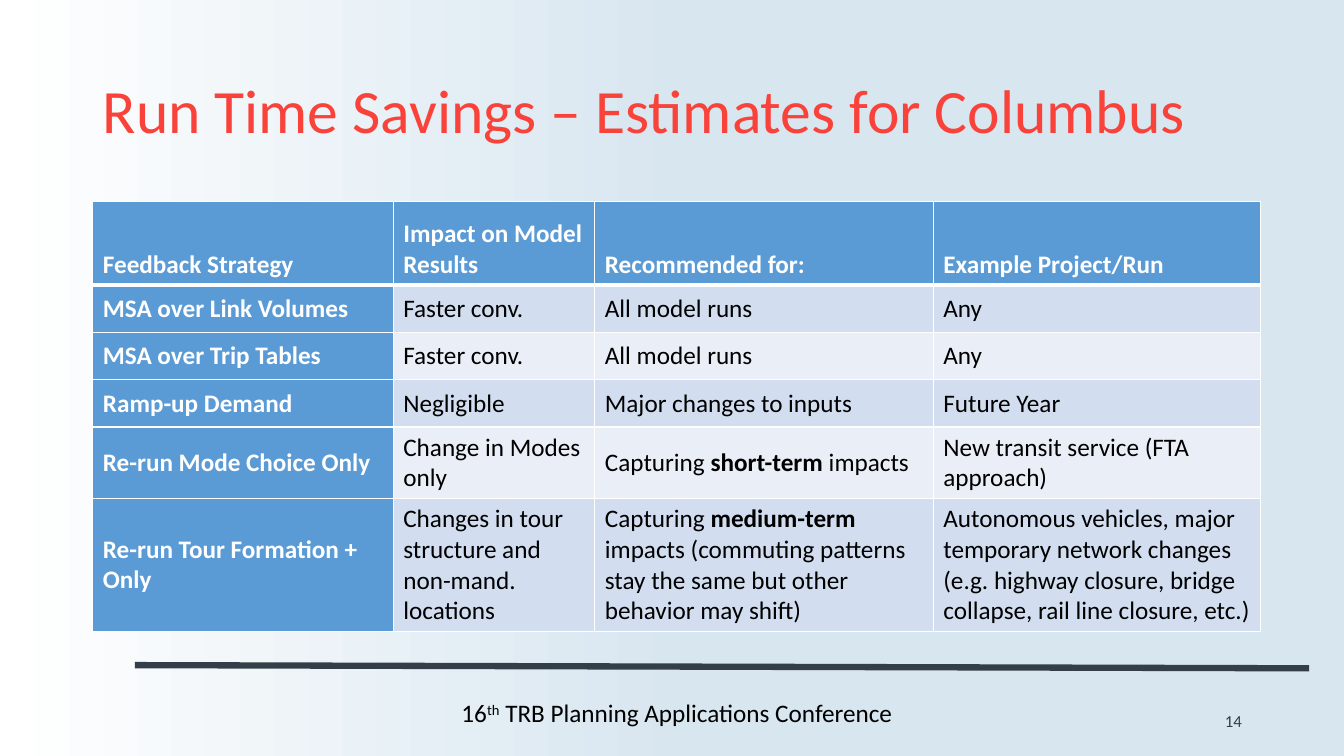
from typing import NamedTuple

from lxml import etree
from pptx import Presentation
from pptx.dml.color import RGBColor
from pptx.enum import shapes, text
from pptx.oxml import ns
from pptx.util import Cm, Pt

FONT = "Calibri"
WHITE = RGBColor(0xFF, 0xFF, 0xFF)
BLACK = RGBColor(0x00, 0x00, 0x00)
PALE_BLUE = RGBColor(0xD8, 0xE6, 0xF0)
SLATE = RGBColor(0x33, 0x3E, 0x48)
RED = RGBColor(0xF9, 0x42, 0x3A)
HEADER_BLUE = RGBColor(0x5B, 0x9B, 0xD5)
BANDS = (RGBColor(0xD2, 0xDE, 0xEF), RGBColor(0xEA, 0xEF, 0xF7))

COLUMN_WIDTHS = (7.57, 5.08, 8.53, 8.25)
ROW_HEIGHTS = (2.11, 1.19, 1.19, 1.19, 1.8, 3.35)


class Run(NamedTuple):
    text: str
    bold: bool = False
    superscript: bool = False


class Label(NamedTuple):
    runs: tuple[Run, ...]
    left: float
    top: float
    width: float
    height: float
    size: float
    color: RGBColor
    anchor: text.MSO_ANCHOR = text.MSO_ANCHOR.MIDDLE
    align: text.PP_ALIGN = text.PP_ALIGN.LEFT
    wrap: bool = True
    line_spacing: float = 1.0


class Strategy(NamedTuple):
    name: str
    impact: str
    recommended: tuple[Run, ...]
    example: str


HEADER = ("Feedback Strategy", "Impact on Model Results",
          "Recommended for:", "Example Project/Run")
STRATEGIES = (
    Strategy("MSA over Link Volumes", "Faster conv.", (Run("All model runs"),), "Any"),
    Strategy("MSA over Trip Tables", "Faster conv.", (Run("All model runs"),), "Any"),
    Strategy("Ramp-up Demand", "Negligible", (Run("Major changes to inputs"),), "Future Year"),
    Strategy("Re-run Mode Choice Only", "Change in Modes only",
             (Run("Capturing "), Run("short-term", bold=True), Run(" impacts")),
             "New transit service (FTA approach)"),
    Strategy("Re-run Tour Formation + Only",
             "Changes in tour structure and non-mand. locations",
             (Run("Capturing "), Run("medium-term", bold=True),
              Run(" impacts (commuting patterns stay the same but other behavior may shift)")),
             "Autonomous vehicles, major temporary network changes "
             "(e.g. highway closure, bridge collapse, rail line closure, etc.)"),
)
LABELS = (
    Label((Run("16"), Run("th", superscript=True),
           Run(" TRB Planning Applications Conference")),
          11.38, 17.45, 11.73, 1.02, 18, BLACK, text.MSO_ANCHOR.TOP, wrap=False),
    Label((Run("Run Time Savings – Estimates for Columbus"),),
          2.34, 1.02, 29.21, 3.68, 44, RED, line_spacing=0.9),
    Label((Run("14"),), 23.93, 17.65, 7.62, 1.02, 12, SLATE, align=text.PP_ALIGN.RIGHT),
)


def add_runs(p, runs: tuple[Run, ...], size: float, color: RGBColor) -> None:
    for run in runs:
        r = p.add_run()
        r.text = run.text
        r.font.name = FONT
        r.font.size = Pt(size)
        r.font.bold = run.bold
        r.font.color.rgb = color
        if run.superscript:
            r._r.get_or_add_rPr().set("baseline", "30000")


def add_label(s, label: Label) -> None:
    sp = s.shapes.add_textbox(Cm(label.left), Cm(label.top), Cm(label.width), Cm(label.height))
    tf = sp.text_frame
    tf.word_wrap = label.wrap
    tf.vertical_anchor = label.anchor
    p = tf.paragraphs[0]
    p.alignment = label.align
    p.line_spacing = label.line_spacing
    add_runs(p, label.runs, label.size, label.color)


def set_borders(cell, **widths: float) -> None:
    """Draw white cell borders; the keys are L, R, T and B, in points."""
    tc_pr = cell._tc.get_or_add_tcPr()
    for side, width in widths.items():
        ln = etree.SubElement(tc_pr, ns.qn(f"a:ln{side}"), w=str(Pt(width)))
        fill = etree.SubElement(ln, ns.qn("a:solidFill"))
        etree.SubElement(fill, ns.qn("a:srgbClr"), val=str(WHITE))


def add_strategy_table(s) -> None:
    rows = [tuple((Run(title, bold=True),) for title in HEADER)]
    rows += [((Run(st.name, bold=True),), (Run(st.impact),), st.recommended, (Run(st.example),))
             for st in STRATEGIES]
    table = s.shapes.add_table(
        len(rows), len(HEADER), Cm(2.34), Cm(5.08),
        Cm(sum(COLUMN_WIDTHS)), Cm(sum(ROW_HEIGHTS))).table
    table.first_col = True
    for column, width in zip(table.columns, COLUMN_WIDTHS):
        column.width = Cm(width)
    for i, (row, height) in enumerate(zip(rows, ROW_HEIGHTS)):
        table.rows[i].height = Cm(height)
        for j, runs in enumerate(row):
            cell = table.cell(i, j)
            is_heading = i == 0 or j == 0
            set_borders(cell, L=1, R=1, T=3 if i == 1 else 1, B=3 if i == 0 else 1)
            cell.fill.solid()
            cell.fill.fore_color.rgb = HEADER_BLUE if is_heading else BANDS[(i - 1) % 2]
            cell.vertical_anchor = text.MSO_ANCHOR.BOTTOM if i == 0 else text.MSO_ANCHOR.MIDDLE
            add_runs(cell.text_frame.paragraphs[0], runs, 18, WHITE if is_heading else BLACK)


def set_background(s) -> None:
    fill = s.background.fill
    fill.gradient()
    fill.gradient_angle = 0
    for stop, position, color in zip(fill.gradient_stops, (0, 0.51), (WHITE, PALE_BLUE)):
        stop.position = position
        stop.color.rgb = color


def add_footer_rule(s) -> None:
    rule = s.shapes.add_connector(
        shapes.MSO_CONNECTOR.STRAIGHT, Cm(3.4), Cm(16.76), Cm(32.99), Cm(16.84))
    rule.line.color.rgb = SLATE
    rule.line.width = Pt(4.5)
    etree.SubElement(rule._element.spPr, ns.qn("a:effectLst"))


def main() -> None:
    prs = Presentation()
    prs.slide_width, prs.slide_height = Cm(33.87), Cm(19.05)
    s = prs.slides.add_slide(prs.slide_layouts[6])
    set_background(s)
    add_footer_rule(s)
    for label in LABELS:
        add_label(s, label)
    add_strategy_table(s)
    prs.save("out.pptx")


if __name__ == "__main__":
    main()
